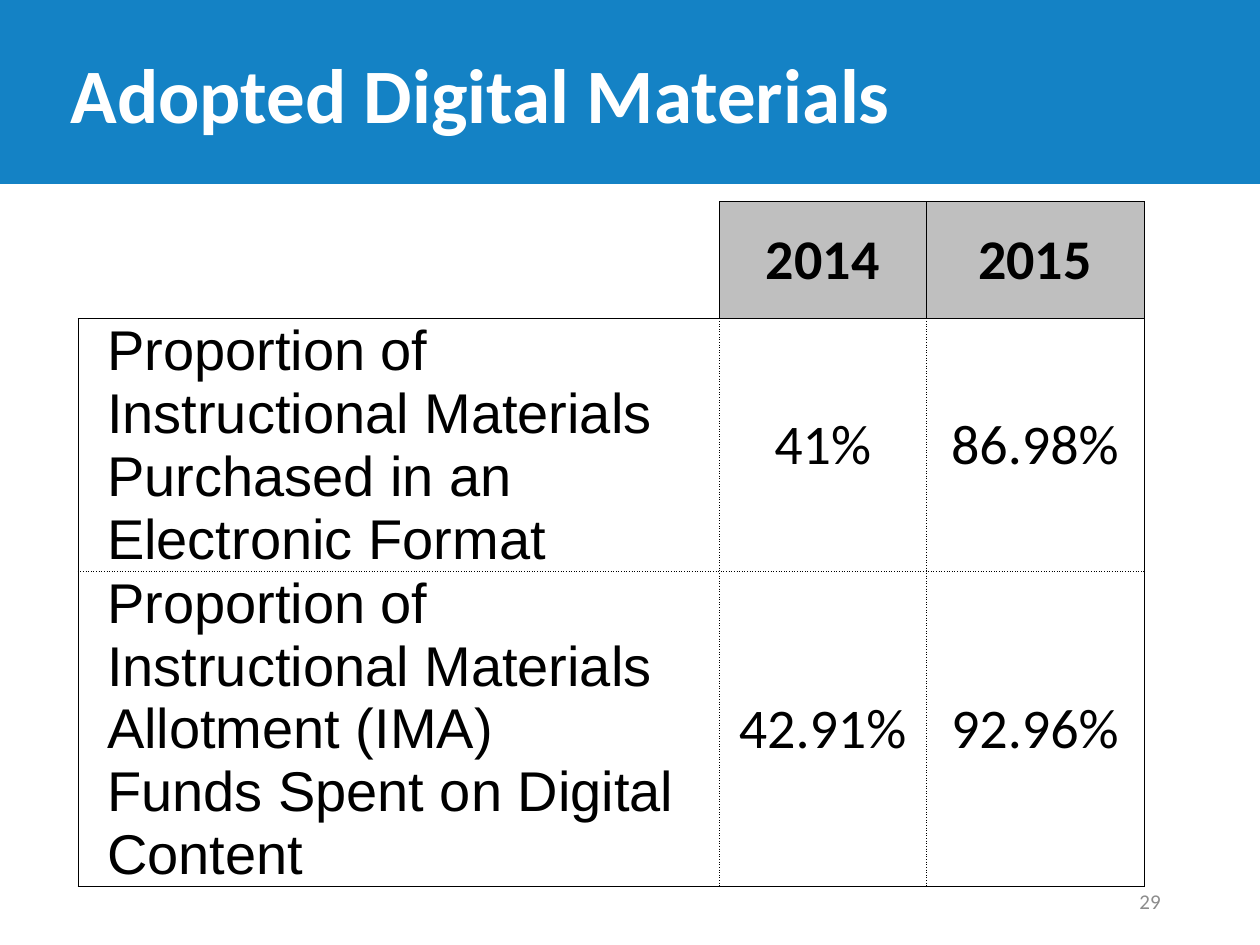
from lxml import etree
from pptx import Presentation
from pptx.dml.color import RGBColor
from pptx.enum.shapes import MSO_SHAPE
from pptx.enum.text import MSO_ANCHOR, MSO_AUTO_SIZE, PP_ALIGN
from pptx.oxml.ns import qn
from pptx.util import Inches, Pt

COLORS = {
    "banner": "1482C5",
    "title": "FFFFFF",
    "header": "BFBFBF",
    "text": "000000",
    "page": "8C8C8C",
}
ROWS = [
    ["", "2014", "2015"],
    ["Proportion of Instructional Materials Purchased in an Electronic Format",
     "41%", "86.98%"],
    ["Proportion of Instructional Materials Allotment (IMA) \vFunds Spent on Digital Content",
     "42.91%", "92.96%"],
]
COLUMN_WIDTHS = [5.09, 1.64, 1.73]
ROW_HEIGHTS = [0.93, 1.96, 2.45]


def rgb(name):
    return RGBColor.from_string(COLORS[name])


def format_text(frame, size, color, align, font="Calibri", bold=False):
    for paragraph in frame.paragraphs:
        paragraph.alignment = align
        for run in paragraph.runs:
            run.font.name = font
            run.font.size = Pt(size)
            run.font.bold = bold
            run.font.color.rgb = rgb(color)


def add_title_banner(slide, left, top, width, height):
    banner = slide.shapes.add_shape(
        MSO_SHAPE.RECTANGLE, Inches(left), Inches(top), Inches(width), Inches(height))
    banner.shadow.inherit = False
    banner.fill.solid()
    banner.fill.fore_color.rgb = rgb("banner")
    banner.line.color.rgb = rgb("banner")
    banner.line.width = Pt(1)

    title = slide.shapes.title
    title._element.addprevious(banner._element)
    title.left, title.top = Inches(left + 0.46), Inches(top + 0.12)
    title.width, title.height = Inches(8.62), Inches(height - 0.12)
    frame = title.text_frame
    frame.text = "Adopted Digital Materials"
    frame.auto_size = MSO_AUTO_SIZE.NONE
    frame.vertical_anchor = MSO_ANCHOR.MIDDLE
    frame.paragraphs[0].line_spacing = 0.9
    format_text(frame, 44, "title", PP_ALIGN.LEFT, bold=True)


def set_border(cell, side, dash):
    """Draw one side of a cell with the given dash, or leave it open for None."""
    border = etree.SubElement(cell._tc.get_or_add_tcPr(), qn(f"a:ln{side}"))
    if dash is None:
        etree.SubElement(border, qn("a:noFill"))
        return
    border.set("w", str(Pt(0.5)))
    fill = etree.SubElement(border, qn("a:solidFill"))
    etree.SubElement(fill, qn("a:srgbClr"), val=COLORS["text"])
    etree.SubElement(border, qn("a:prstDash"), val=dash)


def border_dashes(row, column):
    """Lines inside the body are dotted, others solid; the corner is open outside."""
    corner = row == 0 and column == 0

    def vertical(edge):
        return "sysDot" if row > 0 and edge in (1, 2) else "solid"

    def horizontal(edge):
        return "sysDot" if edge == 2 else "solid"

    return {
        "L": None if corner else vertical(column),
        "R": vertical(column + 1),
        "T": None if corner else horizontal(row),
        "B": horizontal(row + 1),
    }


def fill_cell(cell, text, row, column):
    for side, dash in border_dashes(row, column).items():
        set_border(cell, side, dash)
    is_label = column == 0
    if row == 0 and not is_label:
        cell.fill.solid()
        cell.fill.fore_color.rgb = rgb("header")
    else:
        cell.fill.background()
    cell.vertical_anchor = MSO_ANCHOR.MIDDLE
    cell.margin_left = Inches(0.23 if is_label else 0.01)
    cell.margin_right = cell.margin_top = Inches(0.01)
    cell.margin_bottom = 0
    cell.text_frame.text = text
    format_text(cell.text_frame, 32, "text",
                PP_ALIGN.LEFT if is_label else PP_ALIGN.CENTER,
                "Arial" if is_label else "Calibri", bold=row == 0)


def add_materials_table(slide, left, top):
    table = slide.shapes.add_table(
        len(ROWS), len(COLUMN_WIDTHS), Inches(left), Inches(top),
        Inches(sum(COLUMN_WIDTHS)), Inches(sum(ROW_HEIGHTS))).table
    table.first_row = table.horz_banding = False
    for column, width in zip(table.columns, COLUMN_WIDTHS):
        column.width = Inches(width)
    for row, height in zip(table.rows, ROW_HEIGHTS):
        row.height = Inches(height)
    for row, texts in enumerate(ROWS):
        for column, text in enumerate(texts):
            fill_cell(table.cell(row, column), text, row, column)


def add_page_number(slide, left, top, width, height):
    frame = slide.shapes.add_textbox(
        Inches(left), Inches(top), Inches(width), Inches(height)).text_frame
    frame.word_wrap = True
    frame.vertical_anchor = MSO_ANCHOR.MIDDLE
    frame.text = "29"
    format_text(frame, 12, "page", PP_ALIGN.RIGHT)


def main():
    deck = Presentation()
    deck.slide_width, deck.slide_height = Inches(10), Inches(7.5)
    slide = deck.slides.add_slide(deck.slide_layouts[5])
    add_title_banner(slide, 0, 0, 10, 1.45)
    add_materials_table(slide, 0.62, 1.6)
    add_page_number(slide, 7.06, 6.95, 2.25, 0.4)
    deck.save("out.pptx")


if __name__ == "__main__":
    main()
